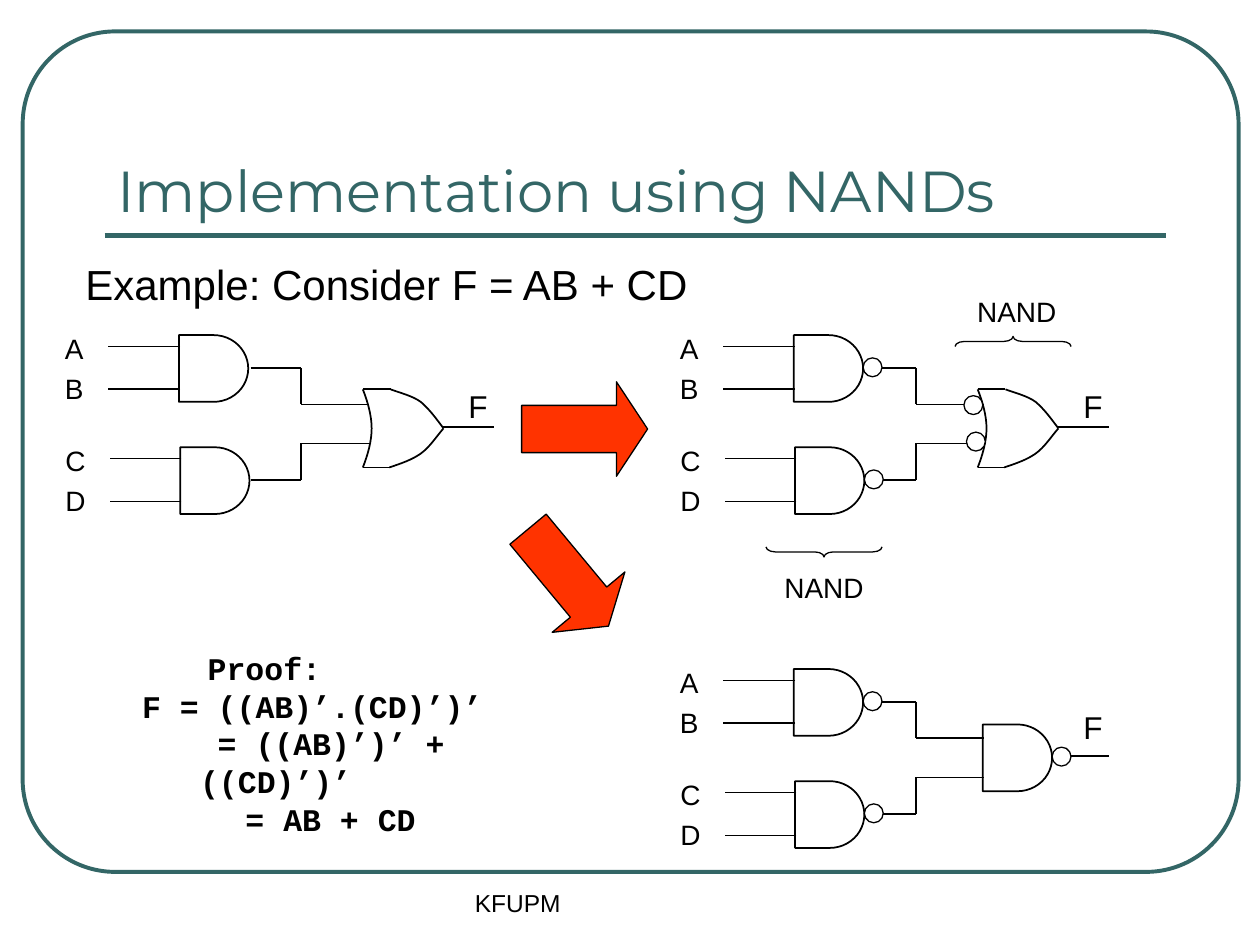
"""Build a slide that turns an AND-OR circuit into NAND gates."""
from dataclasses import dataclass

from lxml.etree import SubElement
from pptx import Presentation
from pptx.dml.color import RGBColor
from pptx.enum.shapes import MSO_CONNECTOR, MSO_SHAPE
from pptx.enum.text import MSO_ANCHOR, MSO_AUTO_SIZE, PP_ALIGN
from pptx.oxml.ns import qn
from pptx.util import Cm, Pt

TEAL, BLACK, WHITE, RED = "336666", "000000", "FFFFFF", "FF3300"


@dataclass
class Branch:
    names: str
    shift: float
    top: float
    mid: float
    end: float


@dataclass
class Circuit:
    left: float
    top: float
    nand: bool
    final: str


@dataclass
class Step:
    text: str
    left: float
    first: float = 0


BRANCHES = [Branch("AB", 0, 2.66, 2.92, 3.21),
            Branch("CD", 0.01, 3.55, 3.81, 3.52)]
CIRCUITS = [Circuit(0, 0, False, "or"),
            Circuit(4.88, 0, True, "mixed"),
            Circuit(4.88, 2.65, True, "nand")]
STEPS = [Step("Proof:", 1.12), Step("F = ((AB)’.(CD)’)’", 0.6),
         Step("= ((AB)’)’ + ((CD)’)’", 1.06, 0.14),
         Step("= AB + CD", 1.42)]
CURVES = [[(2.88, 3.09), (2.92, 3.19), (2.95, 3.3), (2.95, 3.4),
           (2.95, 3.5), (2.92, 3.61), (2.88, 3.71)],
          [(3.1, 3.09), (3.18, 3.12), (3.27, 3.14), (3.34, 3.19),
           (3.41, 3.25), (3.46, 3.32), (3.52, 3.4)],
          [(3.09, 3.71), (3.18, 3.68), (3.27, 3.65), (3.34, 3.6),
           (3.41, 3.55), (3.46, 3.47), (3.52, 3.4)]]


def inch(size: float) -> Cm:
    return Cm(size * 2.54)


def paint(target, code: str) -> None:
    target.rgb = RGBColor.from_string(code)


def style(shape, fill: str | None, line: str, width: float) -> None:
    shape.shadow.inherit = False
    if fill:
        shape.fill.solid()
        paint(shape.fill.fore_color, fill)
    else:
        shape.fill.background()
    paint(shape.line.color, line)
    shape.line.width = Pt(width)


def draw(slide, kind, box: tuple, fill: str | None = None,
         line: str = BLACK, width: float = 0.75, adjust: tuple = (),
         turn: float = 0) -> None:
    shape = slide.shapes.add_shape(kind, *map(inch, box))
    for i, value in enumerate(adjust):
        shape.adjustments[i] = value
    shape.rotation = turn
    style(shape, fill, line, width)


def wire(slide, *points: tuple, code: str = BLACK, width: float = 1) -> None:
    for start, end in zip(points, points[1:]):
        line = slide.shapes.add_connector(
            MSO_CONNECTOR.STRAIGHT, *map(inch, start + end))
        paint(line.line.color, code)
        line.line.width = Pt(width)
        SubElement(line._element.spPr, qn("a:effectLst"))


def curve(slide, points: list, left: float, top: float) -> None:
    dots = [(inch(left + x), inch(top + y)) for x, y in points]
    build = slide.shapes.build_freeform(*dots[0])
    build.add_line_segments(dots[1:], close=False)
    shape = build.convert_to_shape()
    style(shape, None, BLACK, 1)
    trace = shape._element.find(".//" + qn("a:path"))
    lines = trace.findall(qn("a:lnTo"))
    for i in range(0, len(lines), 3):
        bend = SubElement(trace, qn("a:cubicBezTo"))
        for line in lines[i:i + 3]:
            bend.append(line[0])
            trace.remove(line)


def font(para, size: float, face: str = "Arial", code: str = BLACK,
         bold: bool = False) -> None:
    for run in para.runs:
        run.font.size, run.font.name, run.font.bold = Pt(size), face, bold
        paint(run.font.color, code)


def label(slide, text: str, box: tuple, size: float,
          centre: bool = True) -> None:
    frame = slide.shapes.add_textbox(*map(inch, box)).text_frame
    frame.text = text
    frame.word_wrap = not centre
    para = frame.paragraphs[0]
    para.alignment = PP_ALIGN.CENTER if centre else PP_ALIGN.LEFT
    font(para, size)


def gate(slide, x: float, y: float) -> None:
    draw(slide, MSO_SHAPE.FLOWCHART_DELAY, (x, y, 0.55, 0.53), width=1)


def bubble(slide, x: float, y: float) -> None:
    draw(slide, MSO_SHAPE.OVAL, (x, y, 0.15, 0.15), WHITE)


def branch(slide, part: Branch, plan: Circuit) -> None:
    x, y = plan.left + part.shift, plan.top + part.top
    mid, end = plan.top + part.mid, plan.top + part.end
    for i, name in enumerate(part.names):
        level = y + 0.09 + i * 0.34
        wire(slide, (x + 1.43, level), (x + 0.86, level))
        label(slide, name, (x + 0.41, y - 0.08 + i * 0.32, 0.36, 0.37), 16)
    bend = plan.left + 2.39
    wire(slide, (plan.left + 1.99, mid), (bend, mid), (bend, end),
         (plan.left + 2.93, end))
    gate(slide, x + 1.42, y)
    if plan.nand:
        bubble(slide, x + 1.97, y + 0.18)


def circuit(slide, plan: Circuit) -> None:
    x, y = plan.left, plan.top
    for part in BRANCHES:
        branch(slide, part, plan)
    nand = plan.final == "nand"
    level = y + (3.35 if nand else 3.39)
    wire(slide, (x + 3.52, level), (x + 3.92, level))
    label(slide, "F", (x + 3.62, level - (0.43 if nand else 0.37),
                       0.34, 0.4), 18)
    if nand:
        gate(slide, x + 2.92, y + 3.1)
        bubble(slide, x + 3.47, y + 3.28)
        return
    for points in CURVES:
        curve(slide, points, x, y)
    for edge in (3.09, 3.71):
        wire(slide, (x + 2.88, y + edge), (x + 3.1, y + edge))
    if plan.final == "mixed":
        bubble(slide, x + 2.77, y + 3.14)
        bubble(slide, x + 2.79, y + 3.43)


def proof(slide) -> None:
    frame = slide.shapes.add_textbox(
        *map(inch, (0.43, 5.1, 4.23, 1.3))).text_frame
    frame.word_wrap = True
    for i, step in enumerate(STEPS):
        para = frame.add_paragraph() if i else frame.paragraphs[0]
        para.text = step.text
        font(para, 18, "Courier New", bold=True)
        props = para._p.get_or_add_pPr()
        props.set("marL", str(inch(step.left)))
        props.set("indent", str(inch(step.first)))


def title(slide, text: str) -> None:
    shape = slide.shapes.title
    shape.left, shape.top, shape.width, shape.height = map(
        inch, (0.83, 0.58, 8.41, 1.25))
    frame = shape.text_frame
    frame.text = text
    frame.auto_size = MSO_AUTO_SIZE.NONE
    frame.vertical_anchor = MSO_ANCHOR.BOTTOM
    frame.paragraphs[0].alignment = PP_ALIGN.LEFT
    font(frame.paragraphs[0], 33, "Montserrat", TEAL)


def main() -> None:
    deck = Presentation()
    deck.slide_width, deck.slide_height = inch(10), inch(7.5)
    slide = deck.slides.add_slide(deck.slide_layouts[5])
    draw(slide, MSO_SHAPE.ROUNDED_RECTANGLE, (0.18, 0.25, 9.65, 6.67),
         line=TEAL, width=2.25, adjust=(0.11,))
    wire(slide, (0.83, 1.87), (9.25, 1.87), code=TEAL, width=3)
    title(slide, "Implementation using NANDs")
    label(slide, "Example: Consider F = AB + CD", (0.58, 2, 8.67, 0.83),
          24, centre=False)
    for plan in CIRCUITS:
        circuit(slide, plan)
    for x, y, turn in ((4.14, 3.03, 0), (4.01, 4.21, 50.3)):
        draw(slide, MSO_SHAPE.RIGHT_ARROW, (x, y, 1, 0.75), RED,
             adjust=(0.5, 0.33), turn=turn)
    for x, y, turn, left, top in ((6.5, 3.92, 270, 6.12, 4.48),
                                  (8, 2.25, 90, 7.65, 2.29)):
        draw(slide, MSO_SHAPE.LEFT_BRACE, (x, y, 0.08, 0.92),
             adjust=(0.92, 0.5), turn=turn)
        label(slide, "NAND", (left, top, 0.84, 0.37), 16)
    proof(slide)
    label(slide, "KFUPM", (3.67, 7, 3.16, 0.5), 14, centre=False)
    deck.save("out.pptx")


if __name__ == "__main__":
    main()
